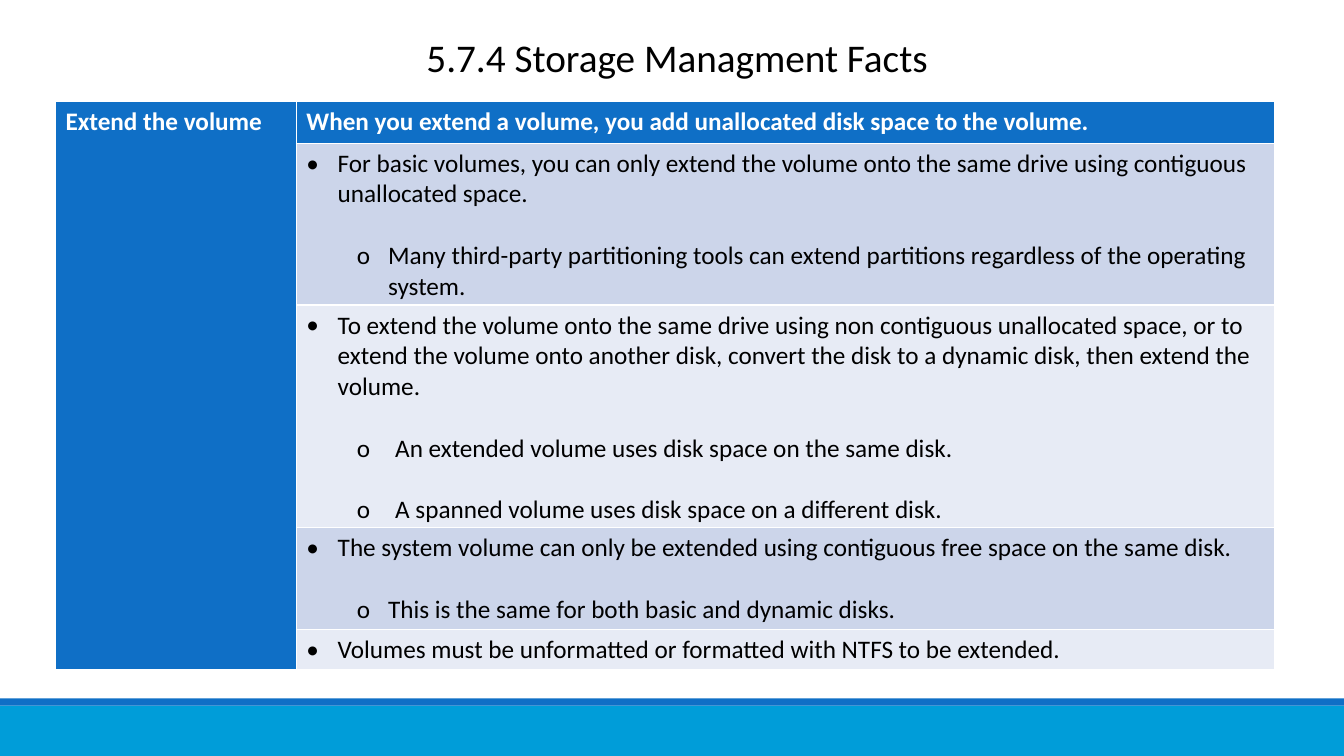
from lxml.etree import SubElement
from pptx import Presentation
from pptx.dml.color import RGBColor
from pptx.enum.shapes import MSO_SHAPE
from pptx.enum.text import PP_ALIGN
from pptx.oxml.ns import qn
from pptx.util import Inches, Pt

BLUE = RGBColor(0x0F, 0x6F, 0xC6)
CYAN = RGBColor(0x00, 0x9D, 0xD9)
BAND_DARK = RGBColor(0xCC, 0xD5, 0xEA)
BAND_LIGHT = RGBColor(0xE7, 0xEB, 0xF5)
WHITE = RGBColor(0xFF, 0xFF, 0xFF)
BLACK = RGBColor(0x00, 0x00, 0x00)
FONT = "Calibri"
WIDTH, HEIGHT = 13.33, 7.5
LINE_GAP = Pt(22)

TITLE = "5.7.4 Storage Managment Facts"
ROW_LABEL = "Extend the volume"
HEADING = "When you extend a volume, you add unallocated disk space to the volume."

# Each row: height, left indent and hanging indent of its sub-points, point, sub-points
FACTS = [
    (1.6, 0.81, 0.31,
     "For basic volumes, you can only extend the volume onto the same drive "
     "using contiguous unallocated space.",
     ["Many third-party partitioning tools can extend partitions regardless "
      "of the operating system."]),
    (2.21, 0.88, 0.38,
     "To extend the volume onto the same drive using non contiguous unallocated "
     "space, or to extend the volume onto another disk, convert the disk to a "
     "dynamic disk, then extend the volume.",
     ["An extended volume uses disk space on the same disk.",
      "A spanned volume uses disk space on a different disk."]),
    (0.99, 0.81, 0.31,
     "The system volume can only be extended using contiguous free space on "
     "the same disk.",
     ["This is the same for both basic and dynamic disks."]),
    (0.4, 0.81, 0.31,
     "Volumes must be unformatted or formatted with NTFS to be extended.", []),
]


def write(para, text, size, color, bold=False):
    para.text = text
    font = para.font
    font.name, font.size, font.bold = FONT, Pt(size), bold
    font.color.rgb = color


def add_bullet(para, mark, left, hanging):
    """Give the paragraph a bullet and a hanging indent, in inches."""
    properties = para._p.get_or_add_pPr()
    properties.set("marL", str(Inches(left)))
    properties.set("indent", str(-Inches(hanging)))
    SubElement(properties, qn("a:buFont"), typeface=FONT)
    SubElement(properties, qn("a:buChar"), char=mark)


def fill_cell(cell, color):
    cell.fill.solid()
    cell.fill.fore_color.rgb = color


def add_band(slide, top, height, color):
    band = slide.shapes.add_shape(MSO_SHAPE.RECTANGLE, 0, Inches(top),
                                  Inches(WIDTH), Inches(height))
    band.shadow.inherit = False
    band.fill.solid()
    band.fill.fore_color.rgb = color
    band.line.fill.background()


def add_footer(slide, top):
    stripe = 0.07
    add_band(slide, top + stripe, HEIGHT - top - stripe, CYAN)
    add_band(slide, top, stripe, BLUE)


def add_title(slide, left, top, width, height):
    box = slide.shapes.add_textbox(Inches(left), Inches(top), Inches(width), Inches(height))
    box.text_frame.word_wrap = True
    para = box.text_frame.paragraphs[0]
    para.alignment = PP_ALIGN.CENTER
    write(para, TITLE, 28, BLACK)


def write_fact(cell, left, hanging, point, sub_points):
    frame = cell.text_frame
    para = frame.paragraphs[0]
    add_bullet(para, "•", 0.31, 0.31)
    write(para, point, 18, BLACK)
    for sub_point in sub_points:
        para = frame.add_paragraph()
        para.level = 1
        add_bullet(para, "o", left, hanging)
        para.space_before = LINE_GAP
        write(para, sub_point, 18, BLACK)


def add_facts_table(slide, left, top, width, height):
    label_width = 2.39
    table = slide.shapes.add_table(len(FACTS) + 1, 2, Inches(left), Inches(top),
                                   Inches(width), Inches(height)).table
    table.columns[0].width = Inches(label_width)
    table.columns[1].width = Inches(width - label_width)
    table.rows[0].height = Inches(height - sum(fact[0] for fact in FACTS))

    table.cell(0, 0).merge(table.cell(len(FACTS), 0))
    for column, text in enumerate((ROW_LABEL, HEADING)):
        cell = table.cell(0, column)
        fill_cell(cell, BLUE)
        write(cell.text_frame.paragraphs[0], text, 18, WHITE, bold=True)

    for row, (row_height, *fact) in enumerate(FACTS, start=1):
        table.rows[row].height = Inches(row_height)
        cell = table.cell(row, 1)
        fill_cell(cell, BAND_DARK if row % 2 else BAND_LIGHT)
        write_fact(cell, *fact)


def main():
    deck = Presentation()
    deck.slide_width, deck.slide_height = Inches(WIDTH), Inches(HEIGHT)
    slide = deck.slides.add_slide(deck.slide_layouts[6])
    add_footer(slide, 6.93)
    add_title(slide, 4.13, 0.28, 5.17, 0.57)
    add_facts_table(slide, 0.55, 1.01, 12.09, 5.61)
    deck.save("out.pptx")


if __name__ == "__main__":
    main()
